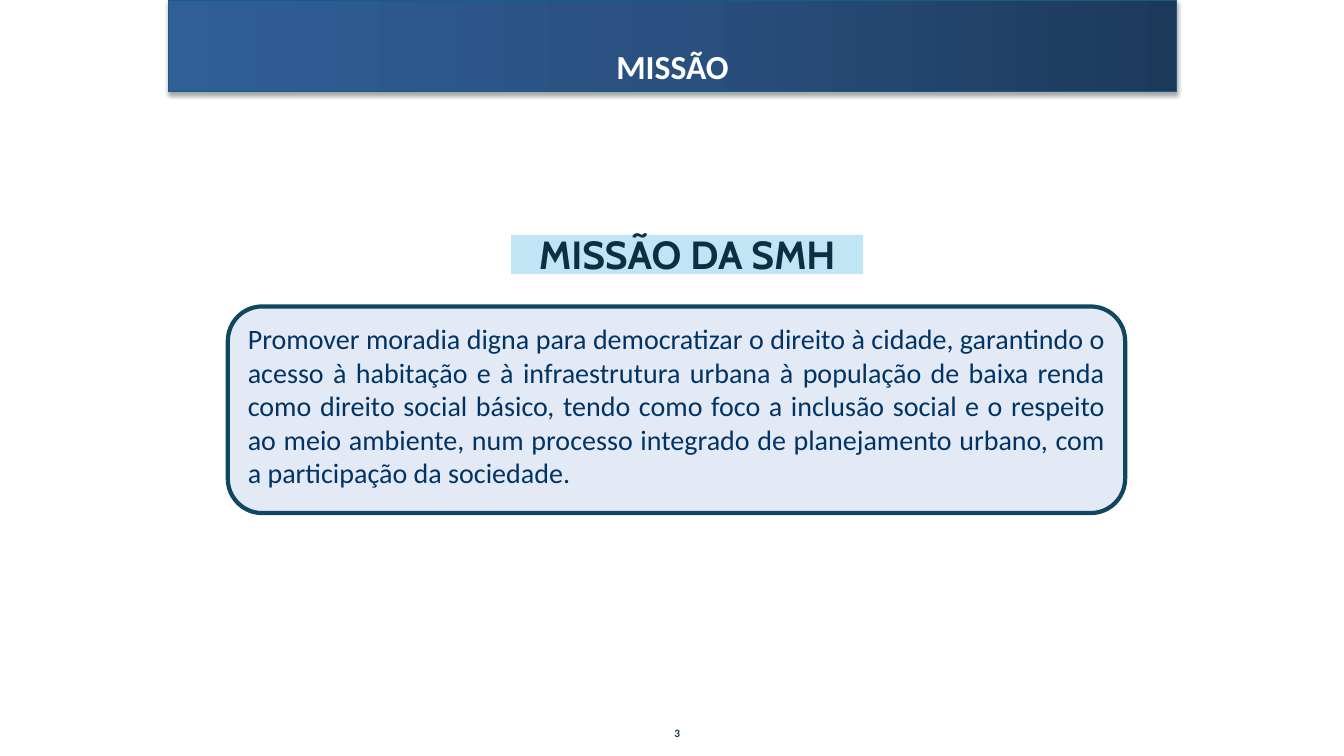
from dataclasses import dataclass
from typing import Optional

from lxml.etree import SubElement
from pptx import Presentation
from pptx.dml.color import RGBColor
from pptx.enum.shapes import MSO_SHAPE as Preset
from pptx.enum.text import MSO_ANCHOR as Anchor, PP_ALIGN as Align
from pptx.oxml import parse_xml
from pptx.oxml.ns import nsdecls, qn
from pptx.util import Inches, Pt

WHITE = RGBColor(0xFF, 0xFF, 0xFF)
BANNER_DARK = RGBColor(0x1D, 0x39, 0x5A)
BANNER_MID = RGBColor(0x29, 0x50, 0x80)
BANNER_LIGHT = RGBColor(0x30, 0x5F, 0x98)
BANNER_EDGE = RGBColor(0x12, 0x5F, 0x82)
PANEL = RGBColor(0xE3, 0xEA, 0xF5)
PANEL_EDGE = RGBColor(0x10, 0x47, 0x60)
PANEL_TEXT = RGBColor(0x00, 0x33, 0x66)
LABEL = RGBColor(0xC1, 0xE5, 0xF5)
LABEL_TEXT = RGBColor(0x0B, 0x30, 0x41)
NUMBER_TEXT = RGBColor(0x17, 0x37, 0x5E)

MISSION = (
    "Promover moradia digna para democratizar o direito à cidade, garantindo o "
    "acesso à habitação e à infraestrutura urbana à população de baixa renda "
    "como direito social básico, tendo como foco a inclusão social e o respeito "
    "ao meio ambiente, num processo integrado de planejamento urbano, com "
    "a participação da sociedade."
)


@dataclass
class TextStyle:
    size: float
    color: RGBColor
    align: Align
    bold: bool = True
    font: str = "Calibri"
    line_spacing: Optional[float] = None
    space_before: Optional[float] = None
    anchor: Anchor = Anchor.TOP


@dataclass
class Block:
    preset: Preset
    left: float
    top: float
    width: float
    height: float
    text: str
    style: TextStyle
    fill: Optional[RGBColor] = None
    edge: Optional[RGBColor] = None
    edge_width: float = 0


def write_text(box, text: str, style: TextStyle) -> None:
    frame = box.text_frame
    frame.word_wrap = True
    frame.vertical_anchor = style.anchor
    para = frame.paragraphs[0]
    para.text = text
    para.alignment = style.align
    para.line_spacing = style.line_spacing
    if style.space_before is not None:
        para.space_before = Pt(style.space_before)
    para.font.name = style.font
    para.font.size = Pt(style.size)
    para.font.bold = style.bold
    para.font.color.rgb = style.color


def draw_block(page, block: Block):
    box = page.shapes.add_shape(
        block.preset, Inches(block.left), Inches(block.top),
        Inches(block.width), Inches(block.height))
    box.shadow.inherit = False
    if block.fill is not None:
        box.fill.solid()
        box.fill.fore_color.rgb = block.fill
    if block.edge is not None:
        box.line.color.rgb = block.edge
        box.line.width = Pt(block.edge_width)
    else:
        box.line.fill.background()
    write_text(box, block.text, block.style)
    return box


def shade_banner(box) -> None:
    """Give the banner its three-stop gradient and soft shadow."""
    box.fill.gradient()
    box.fill.gradient_angle = 180
    stops = box.fill._fill._gradFill.find(qn("a:gsLst"))
    for stop in list(stops):
        stops.remove(stop)
    for percent, color in ((0, BANNER_DARK), (50, BANNER_MID), (100, BANNER_LIGHT)):
        stop = SubElement(stops, qn("a:gs"), pos=str(percent * 1000))
        SubElement(stop, qn("a:srgbClr"), val=str(color))
    effects = box._element.spPr.find(qn("a:effectLst"))
    effects.append(parse_xml(
        f'<a:outerShdw {nsdecls("a")} blurRad="{Pt(3.1)}" dist="{Pt(1.8)}" '
        'dir="5400000" rotWithShape="0"><a:srgbClr val="000000">'
        '<a:alpha val="35000"/></a:srgbClr></a:outerShdw>'))


def main() -> None:
    deck = Presentation()
    deck.slide_width, deck.slide_height = Inches(13.33), Inches(7.5)
    page = deck.slides.add_slide(deck.slide_layouts[6])

    # Title banner
    banner = draw_block(page, Block(
        Preset.RECTANGLE, 1.67, 0, 10, 0.91, "MISSÃO",
        TextStyle(24, WHITE, Align.CENTER, line_spacing=0.9, anchor=Anchor.BOTTOM),
        edge=BANNER_EDGE, edge_width=0.75))
    shade_banner(banner)

    # Mission statement and its label
    draw_block(page, Block(
        Preset.ROUNDED_RECTANGLE, 2.26, 3.04, 8.9, 2.05, MISSION,
        TextStyle(20, PANEL_TEXT, Align.JUSTIFY, bold=False, space_before=6),
        fill=PANEL, edge=PANEL_EDGE, edge_width=3))
    draw_block(page, Block(
        Preset.RECTANGLE, 5.07, 2.33, 3.49, 0.39, "MISSÃO DA SMH",
        TextStyle(28, LABEL_TEXT, Align.CENTER, font="Cabin", line_spacing=0.8),
        fill=LABEL))

    # Page number
    number = page.shapes.add_textbox(
        Inches(6.56), Inches(7.21), Inches(0.21), Inches(0.17))
    write_text(number, "3 ", TextStyle(8, NUMBER_TEXT, Align.RIGHT))
    frame = number.text_frame
    frame.word_wrap = False
    frame.margin_left = frame.margin_right = 0
    frame.margin_top = frame.margin_bottom = 0

    deck.save("out.pptx")


if __name__ == "__main__":
    main()
